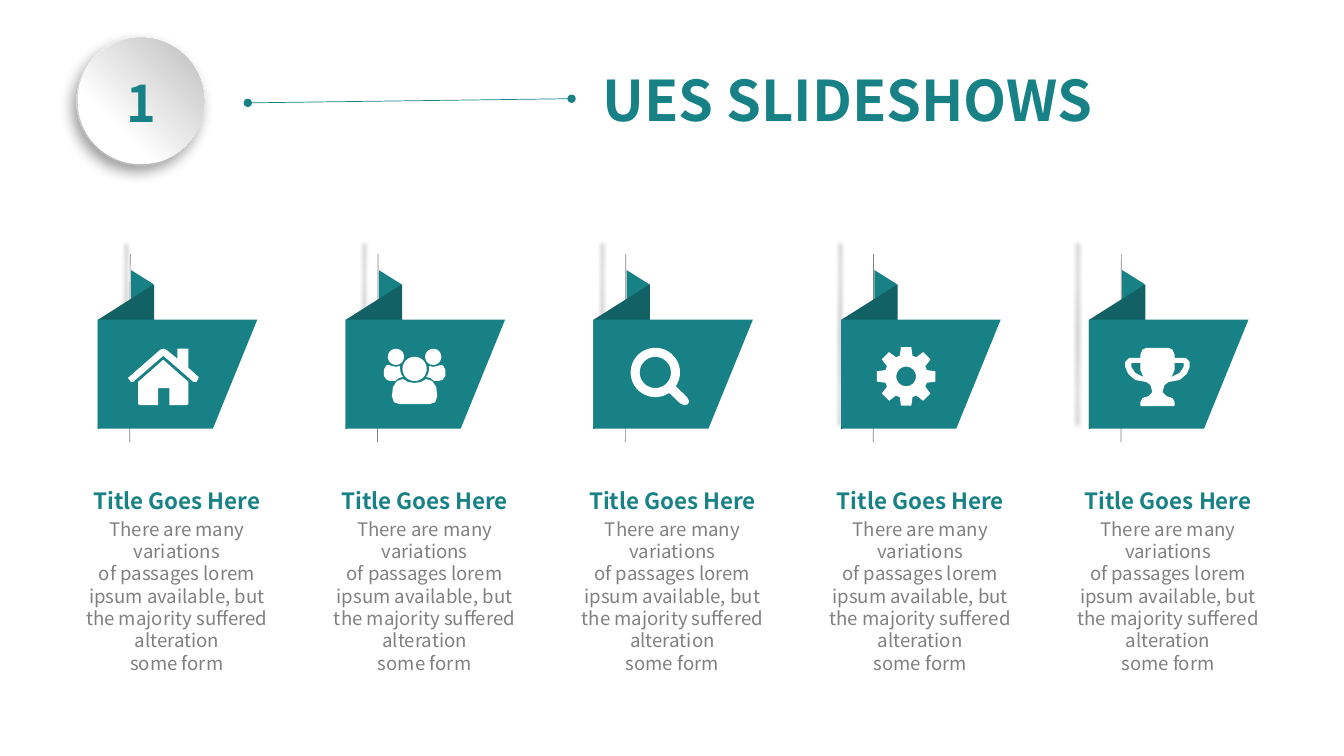
import math

import lxml.etree
import pptx
import pptx.dml.color
import pptx.enum.shapes
import pptx.enum.text
import pptx.oxml.ns
import pptx.util

TEAL, DARK_TEAL, GREY, WHITE = "188186", "126165", "808080", "FFFFFF"
SHAPES = pptx.enum.shapes.MSO_SHAPE
ALIGN = pptx.enum.text.PP_ALIGN
PITCH, FIRST_COLUMN = 29.5, 9
BODY = ("There are many variations\vof passages lorem ipsum available, "
        "but the majority suffered alteration\vsome form")


def colour(hex_code):
    return pptx.dml.color.RGBColor.from_string(hex_code)


def add_xml(parent, tag, **attributes):
    child = lxml.etree.SubElement(parent, pptx.oxml.ns.qn(tag))
    for key, value in attributes.items():
        child.set(key, str(value))
    return child


class Deck:
    """Draws on a grid of 160 columns by 90 rows of square cells."""
    FONT = "Noto Sans CJK SC"
    CELL = 76200

    def __init__(self):
        self.file = pptx.Presentation()
        self.file.slide_width = 160 * self.CELL
        self.file.slide_height = 90 * self.CELL
        self.slide = self.file.slides.add_slide(self.file.slide_layouts[6])

    def cells(self, *lengths):
        return [pptx.util.Emu(round(length * self.CELL)) for length in lengths]

    def paint(self, shape, fill):
        shape.shadow.inherit = False
        shape.line.fill.background()
        shape.fill.solid()
        shape.fill.fore_color.rgb = colour(fill)
        return shape

    def preset(self, kind, box, fill, turn=0, adjust=None):
        shape = self.slide.shapes.add_shape(kind, *self.cells(*box))
        shape.rotation = turn
        if adjust is not None:
            shape.adjustments[0] = adjust
        return self.paint(shape, fill)

    def disc(self, box, stops, angle):
        shape = self.preset(SHAPES.OVAL, box, WHITE)
        shape.fill.gradient()
        shape.fill.gradient_angle = angle
        for stop, (position, shade) in zip(shape.fill.gradient_stops, stops):
            stop.position = position
            stop.color.rgb = colour(shade)
        return shape

    def outline(self, contours, x, y, fill, unit=1.0):
        """One freeform; a contour inside another one is a hole."""
        fine = [[(px * 100, py * 100) for px, py in points] for points in contours]
        builder = self.slide.shapes.build_freeform(*fine[0][0], scale=self.CELL * unit / 100)
        for number, points in enumerate(fine):
            if number:
                builder.move_to(*points[0])
            builder.add_line_segments(points[1:], close=True)
        return self.paint(builder.convert_to_shape(*self.cells(x, y)), fill)

    def line(self, start, end, shade, ends=None):
        connector = self.slide.shapes.add_connector(
            pptx.enum.shapes.MSO_CONNECTOR.STRAIGHT, *self.cells(*start, *end))
        connector.line.width = pptx.util.Pt(0.5)
        connector.line.color.rgb = colour(shade)
        properties = connector._element.spPr
        if ends:
            stroke = properties.find(pptx.oxml.ns.qn("a:ln"))
            for tag in ("a:headEnd", "a:tailEnd"):
                add_xml(stroke, tag, type=ends)
        add_xml(properties, "a:effectLst")
        return connector

    def cast_shadow(self, shape, opacity, blur, distance, direction, **scaling):
        effects = shape._element.spPr.find(pptx.oxml.ns.qn("a:effectLst"))
        shadow = add_xml(effects, "a:outerShdw", blurRad=pptx.util.Pt(blur),
                         dist=pptx.util.Pt(distance), dir=direction * 60000,
                         **scaling, algn="ctr", rotWithShape=0)
        black = add_xml(shadow, "a:srgbClr", val="000000")
        add_xml(black, "a:alpha", val=opacity * 1000)

    def text(self, box, paragraphs, align=ALIGN.CENTER, inset=True):
        """Each paragraph is (words, size, colour, bold, space before)."""
        frame = self.slide.shapes.add_textbox(*self.cells(*box)).text_frame
        frame.word_wrap = True
        frame.auto_size = pptx.enum.text.MSO_AUTO_SIZE.SHAPE_TO_FIT_TEXT
        if not inset:
            frame.margin_left = frame.margin_right = 0
            frame.margin_top = frame.margin_bottom = 0
        for number, (words, size, shade, bold, gap) in enumerate(paragraphs):
            paragraph = frame.add_paragraph() if number else frame.paragraphs[0]
            paragraph.text = words
            paragraph.alignment = align
            if gap:
                paragraph.space_before = pptx.util.Pt(gap)
            paragraph.font.name = self.FONT
            paragraph.font.size = pptx.util.Pt(size)
            paragraph.font.bold = bold
            paragraph.font.color.rgb = colour(shade)


def polar(centre, radius, degrees):
    angle = math.radians(degrees)
    return centre[0] + radius * math.cos(angle), centre[1] + radius * math.sin(angle)


def arc(centre, radius, start=0, end=360, steps=40):
    return [polar(centre, radius, start + (end - start) * k / steps)
            for k in range(steps + 1)]


def mirror(points, axis):
    return [(2 * axis - x, y) for x, y in reversed(points)]


def house():
    roof = [(2, 30), (34, 2), (37, 1), (40, 2), (51, 11), (51, 1), (62, 1), (62, 20),
            (72, 29), (72, 30), (70, 34), (67, 34), (37, 8), (7, 34), (5, 34)]
    walls = [(12, 34), (37, 12), (62, 34), (62, 56), (60, 57), (43, 57), (43, 40),
             (32, 40), (32, 57), (14, 57), (12, 56)]
    return [roof, walls]


def people():
    axis = 40.5
    side = [(21, 33), (17, 33), (13, 32), (10, 28), (10, 22), (12, 18), (14, 17),
            (22, 19), (26, 18), (26, 21), (27, 26), (29, 29), (25, 30)]
    middle = [(26, 56), (20, 54), (18, 48), (19, 39), (23, 33), (29, 31), (34, 34), (axis, 35)]
    heads = [arc((22, 9), 8), arc((59, 9), 8), arc((axis, 21), 12)]
    return heads + [side, mirror(side, axis), middle + mirror(middle, axis)]


def magnifier():
    centre = (33.5, 24.5)
    handle = [(65, 49), (67, 53), (66, 56), (62, 57), (58, 55)]
    return [arc(centre, 24.5, 56, 394) + handle, arc(centre, 15.5)]


def gear():
    centre = (36.5, 28.5)
    tooth = [(21.5, -17), (29.5, -10), (29.5, 10), (21.5, 17)]
    rim = [polar(centre, radius, 45 * k + turn) for k in range(8) for radius, turn in tooth]
    return [rim, arc(centre, 9.7)]


def trophy():
    axis = 40
    cup = [(29, 0), (25, 2), (23, 7), (23, 10), (12, 10), (8, 14), (8, 19), (11, 26),
           (18, 32), (29, 34), (33, 37), (35, 44), (31, 48), (25, 50), (23, 54),
           (23, 57), (24, 58)]
    grip = [(23, 15), (14, 15), (14, 19), (18, 25), (26, 29), (23, 22)]
    return [cup + mirror(cup, axis), grip, mirror(grip, axis)]


def header(deck):
    rim = deck.disc((9.12, 4.44, 15.24, 15.24), [(0.17, WHITE), (0.88, "B8B8B8")], 253)
    deck.cast_shadow(rim, 39, 10, 5, 123)
    deck.disc((9.24, 4.5, 15.06, 15.06), [(0.29, WHITE), (0.98, "BFBFBF")], 45)
    deck.text((8.88, 8.04, 15.84, 8.52), [("1", 36, TEAL, True, 0)])
    deck.line((29.5, 12.25), (68.05, 11.75), TEAL, ends="oval")
    deck.text((70.56, 7.2, 65.4, 9.24), [("UES SLIDESHOWS", 40, TEAL, True, 0)], ALIGN.LEFT)


def ribbon(deck, left):
    pole = deck.line((left + 6.5, 30.25), (left + 6.45, 52.65), GREY)
    deck.cast_shadow(pole, 95, 3, 1, 0, sx=96000, sy=96000)
    deck.preset(SHAPES.TRAPEZOID, (left + 0.12, 38.64, 15.6, 2.64), TEAL, 90, 0.625)
    fold = deck.preset(SHAPES.PARALLELOGRAM, (left - 2.64, 39.12, 17.28, 6.72),
                       DARK_TEAL, 270, 0.632)
    fold._element.spPr.get_or_add_xfrm().set("flipV", "1")
    deck.outline([[(0, 0), (19, 0), (13.7, 13), (0, 13)]], left + 2.64, 38.04, TEAL)


def main():
    deck = Deck()
    header(deck)
    for number, icon in enumerate((house, people, magnifier, gear, trophy)):
        left = FIRST_COLUMN + number * PITCH
        ribbon(deck, left)
        deck.outline(icon(), left + 6, 41.4, WHITE, unit=0.12)
        deck.text((left, 57.96, 24.12, 22.56),
                  [("Title Goes Here", 16, TEAL, True, 0), (BODY, 13.3, GREY, False, 2.7)],
                  inset=False)
    deck.file.save("out.pptx")


if __name__ == "__main__":
    main()
